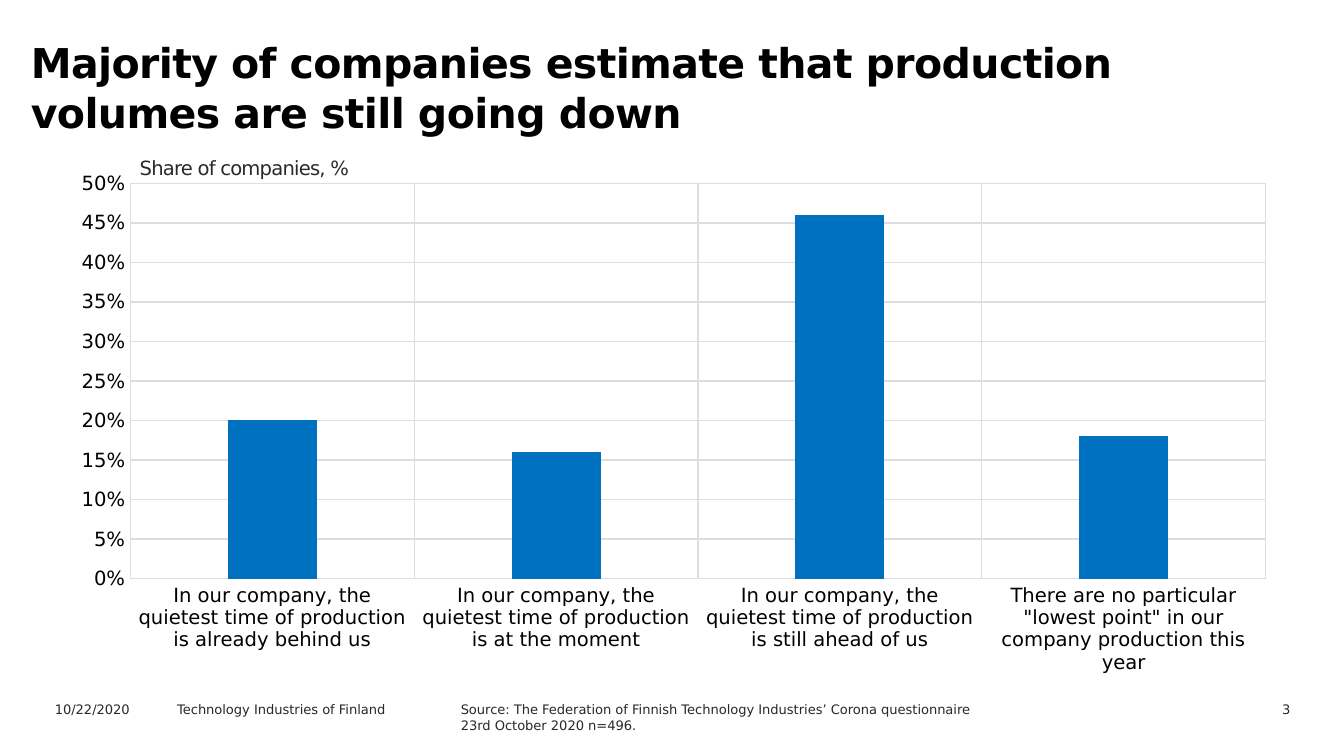
import pptx
import pptx.chart.data
import pptx.dml.color
import pptx.enum.chart
import pptx.enum.text
import pptx.oxml
import pptx.oxml.ns
import pptx.util

Inches, Pt = pptx.util.Inches, pptx.util.Pt
FONT = "DejaVu Sans"
COLORS = {"black": "000000", "ink": "29282E", "grid": "DEDDE1", "bar": "0070C0"}

TITLE = "Majority of companies estimate that production volumes are still going down"
UNIT = "Share of companies, %"
SHARES = [
    ("In our company, the quietest time of production is already behind us", 0.2),
    ("In our company, the quietest time of production is at the moment", 0.16),
    ("In our company, the quietest time of production is still ahead of us", 0.46),
    ('There are no particular "lowest point" in our company production this year', 0.18),
]
# left, width, height, lines, right-aligned
FOOTERS = [
    (8.76, 0.94, 0.18, ["3"], True),
    (0.31, 1, 0.18, ["10/22/2020"], False),
    (1.22, 1.94, 0.18, ["Technology Industries of Finland"], False),
    (3.33, 4.58, 0.4, [
        "Source: The Federation of Finnish Technology Industries’ Corona questionnaire",
        "23rd October 2020 n=496.",
    ], False),
]
PLOT = {"x": 0.06, "y": 0.04, "w": 0.92, "h": 0.76}


def rgb(name):
    return pptx.dml.color.RGBColor.from_string(COLORS[name])


def style(font, size, color):
    font.name, font.size, font.color.rgb = FONT, Pt(size), rgb(color)


def add_text(slide, box, lines, size, color="ink", inset=(0.1, 0.05),
             bold=False, right=False, track=0, pitch=None):
    """Add a text box; track is letter spacing and pitch line spacing, in points."""
    frame = slide.shapes.add_textbox(*map(Inches, box)).text_frame
    frame.word_wrap = True
    frame.margin_left = frame.margin_right = Inches(inset[0])
    frame.margin_top = frame.margin_bottom = Inches(inset[1])
    for i, line in enumerate(lines):
        para = frame.add_paragraph() if i else frame.paragraphs[0]
        if right:
            para.alignment = pptx.enum.text.PP_ALIGN.RIGHT
        if pitch:
            para.line_spacing = Pt(pitch)
        run = para.add_run()
        run.text = line
        style(run.font, size, color)
        run.font.bold = bold
        if track:
            run._r.get_or_add_rPr().set("spc", str(round(track * 100)))


def rule(line):
    line.color.rgb = rgb("grid")
    line.width = Pt(0.75)


def place_plot(chart):
    """Fix the inner plot area as fractions of the chart."""
    area = chart._chartSpace.chart.plotArea
    for old in area.findall(pptx.oxml.ns.qn("c:layout")):
        area.remove(old)
    modes = '<c:xMode val="edge"/><c:yMode val="edge"/>'
    sizes = "".join(f'<c:{key} val="{val}"/>' for key, val in PLOT.items())
    area.insert(0, pptx.oxml.parse_xml(
        f'<c:layout {pptx.oxml.ns.nsdecls("c")}><c:manualLayout>'
        f'<c:layoutTarget val="inner"/>{modes}{sizes}'
        '</c:manualLayout></c:layout>'))


def add_bars(slide, box):
    data = pptx.chart.data.CategoryChartData(number_format="0%")
    data.categories = [name for name, _ in SHARES]
    data.add_series("Series 1", [share for _, share in SHARES])
    kind = pptx.enum.chart.XL_CHART_TYPE.COLUMN_CLUSTERED
    chart = slide.shapes.add_chart(kind, *map(Inches, box), data).chart
    chart.has_legend = chart.has_title = False
    style(chart.font, 10, "ink")
    place_plot(chart)

    plot = chart.plots[0]
    plot.gap_width = 219
    plot.vary_by_categories = False
    fill = plot.series[0].format.fill
    fill.solid()
    fill.fore_color.rgb = rgb("bar")

    cats, vals = chart.category_axis, chart.value_axis
    for axis in (cats, vals):
        axis.has_major_gridlines = True
        rule(axis.major_gridlines.format.line)
        axis.major_tick_mark = axis.minor_tick_mark = pptx.enum.chart.XL_TICK_MARK.NONE
        style(axis.tick_labels.font, 10.5, "black")
    rule(cats.format.line)
    vals.format.line.fill.background()
    vals.minimum_scale, vals.maximum_scale, vals.major_unit = 0, 0.5, 0.05
    vals.tick_labels.number_format = "0%"
    vals.tick_labels.number_format_is_linked = False


def main():
    deck = pptx.Presentation()
    # 16:9
    deck.slide_width, deck.slide_height = Inches(10), Inches(10 * 9 / 16)
    slide = deck.slides.add_slide(deck.slide_layouts[6])
    add_text(slide, (0.12, 0.21, 8.74, 0.71), [TITLE], 22, "black",
             inset=(0.11, 0.06), bold=True, track=-0.3, pitch=27)
    for left, width, height, lines, right in FOOTERS:
        add_text(slide, (left, 5.17, width, height), lines, 7, right=right)
    add_text(slide, (1, 1.12, 7.07, 0.26), [UNIT], 10.5, inset=(0.04, 0.04), track=-0.4)
    add_bars(slide, (0.42, 1.21, 9.18, 3.87))
    deck.save("out.pptx")


if __name__ == "__main__":
    main()
